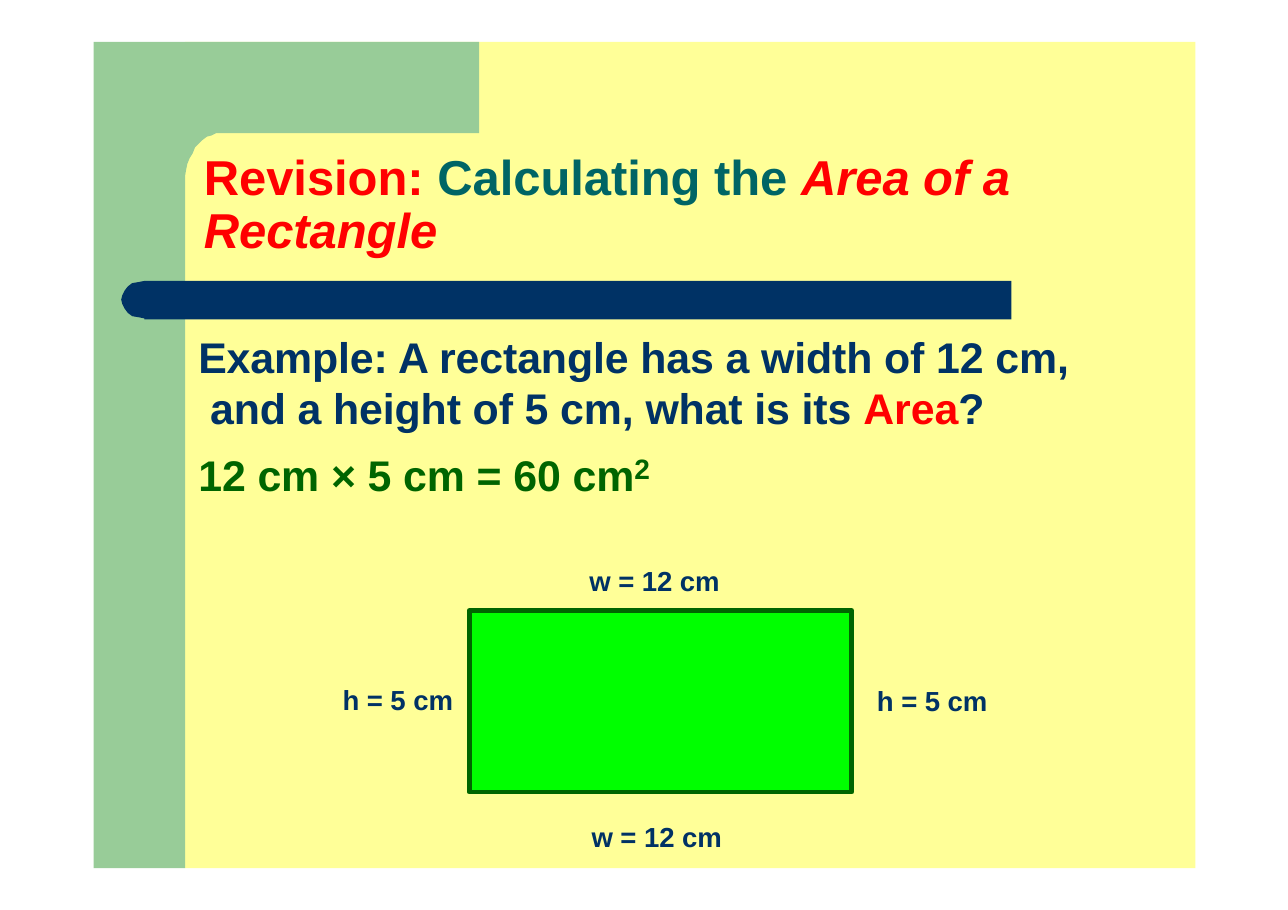
from math import cos, radians, sin

from pptx import Presentation
from pptx.dml.color import RGBColor
from pptx.enum.shapes import MSO_SHAPE
from pptx.enum.text import MSO_ANCHOR, PP_ALIGN
from pptx.util import Pt

EMU_PER_PX = 9144  # 100 px to the inch

YELLOW = RGBColor(0xFF, 0xFF, 0x98)
SAGE = RGBColor(0x98, 0xCC, 0x98)
NAVY = RGBColor(0x00, 0x32, 0x65)
RED = RGBColor(0xFF, 0x00, 0x00)
TEAL = RGBColor(0x00, 0x65, 0x65)
DARK_GREEN = RGBColor(0x00, 0x65, 0x00)
BRIGHT_GREEN = RGBColor(0x00, 0xFF, 0x00)


def px(length):
    return length * EMU_PER_PX


def arc(center, radii, start, end, steps=12):
    """Points on an ellipse, with angles in degrees clockwise from the right."""
    angles = [radians(start + (end - start) * i / steps) for i in range(steps + 1)]
    return [(round(center[0] + radii[0] * cos(a)),
             round(center[1] + radii[1] * sin(a))) for a in angles]


class LessonSlide:
    font_name = "Arial"

    def __init__(self, presentation):
        self.slide = presentation.slides.add_slide(presentation.slide_layouts[6])

    def paint(self, shape, fill, line=None, line_width=3):
        shape.shadow.inherit = False
        shape.fill.solid()
        shape.fill.fore_color.rgb = fill
        if line is None:
            shape.line.fill.background()
        else:
            shape.line.color.rgb = line
            shape.line.width = Pt(line_width)

    def rectangle(self, box, fill, line=None):
        shape = self.slide.shapes.add_shape(MSO_SHAPE.RECTANGLE, *map(px, box))
        self.paint(shape, fill, line)

    def outline(self, points, fill):
        builder = self.slide.shapes.build_freeform(*points[0], scale=EMU_PER_PX)
        builder.add_line_segments(points[1:], close=True)
        self.paint(builder.convert_to_shape(), fill)

    def text(self, box, paragraphs, size, inset_top=1, indent=1):
        """Each paragraph is a pair: its format values and its runs (text, colour, extras)."""
        frame = self.slide.shapes.add_textbox(*map(px, box)).text_frame
        frame_format = {"word_wrap": True, "vertical_anchor": MSO_ANCHOR.TOP,
                        "margin_left": 0, "margin_right": 0,
                        "margin_top": px(inset_top), "margin_bottom": 0}
        for name, value in frame_format.items():
            setattr(frame, name, value)
        for index, (paragraph_format, runs) in enumerate(paragraphs):
            paragraph = frame.add_paragraph() if index else frame.paragraphs[0]
            for name, value in {"alignment": PP_ALIGN.LEFT, **paragraph_format}.items():
                setattr(paragraph, name, value)
            paragraph._p.get_or_add_pPr().set("marL", str(px(indent)))
            for content, color, extras in runs:
                self.run(paragraph, content, color, **{"size": Pt(size), **extras})

    def run(self, paragraph, content, color, baseline=0, **extras):
        """Add text to a paragraph; baseline is the rise of a superscript in percent."""
        for index, line in enumerate(content.split("\n")):
            if index:
                paragraph.add_line_break()
            run = paragraph.add_run()
            run.text = line
            run.font.color.rgb = color
            font_format = {"name": self.font_name, "bold": True, **extras}
            for name, value in font_format.items():
                setattr(run.font, name, value)
            properties = run._r.get_or_add_rPr()
            properties.set("spc", "-5")
            if baseline:
                properties.set("baseline", str(baseline * 1000))

    def label(self, left, top, width, content):
        self.text((left, top, width, 33),
                  [({"space_before": Pt(1)}, [(content, NAVY, {})])], 18)


def draw_background(lesson):
    lesson.rectangle((168, 38, 917, 750), YELLOW)
    corner = arc((200, 166), (32, 45), 180, 270)
    lesson.outline([(435, 38), (85, 38), (85, 788), (168, 788), *corner, (435, 121)], SAGE)
    cap = arc((131, 272), (21, 17), 270, 90)
    lesson.outline([(918, 255), (131, 255), *cap, (131, 290), (918, 290)], NAVY)


def draw_text(lesson):
    lesson.text((184, 119, 802, 117), [
        ({"line_spacing": Pt(34.4), "space_before": Pt(5.5)},
         [("Revision: ", RED, {}), ("Calculating the ", TEAL, {}),
          ("Area of a Rectangle", RED, {"italic": True})]),
    ], 32, inset_top=20)
    lesson.text((176, 299, 815, 152), [
        ({"line_spacing": 1.0, "space_before": Pt(0.8)},
         [("Example: A rectangle has a width of 12 cm,\n and a height of 5 cm, what is its ",
           NAVY, {}),
          ("Area", RED, {}), ("?", NAVY, {})]),
        ({"space_before": Pt(6.8)},
         [("12 cm × 5 cm = 60 cm", DARK_GREEN, {}),
          ("2", DARK_GREEN, {"size": Pt(31.5), "baseline": 26})]),
    ], 28, indent=4)


def draw_diagram(lesson):
    lesson.rectangle((426, 554, 347, 165), BRIGHT_GREEN, DARK_GREEN)
    for left, top in ((310, 619), (795, 620)):
        lesson.label(left, top, 110, "h = 5 cm")
    for left, top in ((534, 511), (536, 743)):
        lesson.label(left, top, 130, "w = 12 cm")


def main():
    presentation = Presentation()
    presentation.slide_width = px(1169)
    presentation.slide_height = px(826)
    lesson = LessonSlide(presentation)
    draw_background(lesson)
    draw_text(lesson)
    draw_diagram(lesson)
    presentation.save("out.pptx")


if __name__ == "__main__":
    main()
